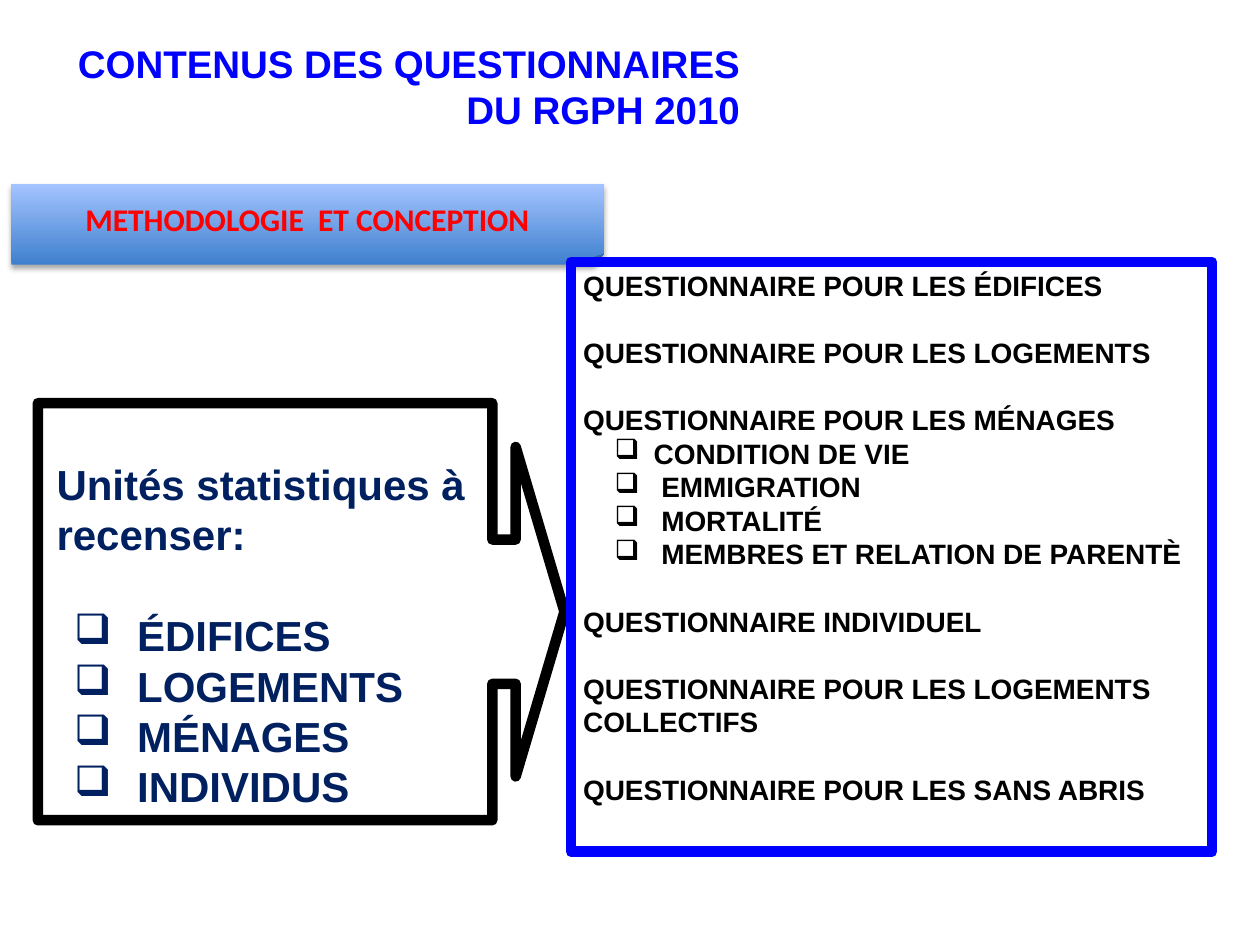
from dataclasses import dataclass
from typing import Optional

from lxml.etree import SubElement
from pptx import Presentation
from pptx.dml.color import RGBColor
from pptx.enum.shapes import MSO_SHAPE as Shape
from pptx.enum.text import MSO_ANCHOR as Anchor, PP_ALIGN as Align
from pptx.oxml.ns import qn
from pptx.util import Inches, Pt


@dataclass(frozen=True)
class Theme:
    blue: str = "0000FF"
    navy: str = "002060"
    red: str = "FF0000"
    black: str = "000000"
    band_bottom: str = "3F80CE"
    band_top: str = "A4C4FF"
    body_font: str = "Arial"
    band_font: str = "Calibri"
    title_size: int = 22
    band_size: int = 18
    units_size: int = 24
    forms_size: int = 16
    frame_width: int = 6


@dataclass(frozen=True)
class Area:
    left: float
    top: float
    width: float
    height: float

    def lengths(self):
        return [Inches(v) for v in (self.left, self.top, self.width, self.height)]


@dataclass(frozen=True)
class Bullet:
    margin: float
    hanging: float


@dataclass(frozen=True)
class Line:
    text: str
    gap: bool = False
    bullet: Optional[Bullet] = None


@dataclass(frozen=True)
class Style:
    size: int
    color: str
    font: str = Theme.body_font
    align: Align = Align.LEFT


THEME = Theme()
LINE_HEIGHT = 1.2

UNIT_BULLET = Bullet(0.64, 0.5)
FORM_BULLET = Bullet(0.62, 0.37)
UNITS = [
    Line("Unités statistiques à recenser:"),
    Line("ÉDIFICES", True, UNIT_BULLET),
    Line("LOGEMENTS", bullet=UNIT_BULLET),
    Line("MÉNAGES", bullet=UNIT_BULLET),
    Line("INDIVIDUS", bullet=UNIT_BULLET),
]
FORMS = [
    Line("QUESTIONNAIRE POUR LES ÉDIFICES"),
    Line("QUESTIONNAIRE POUR LES LOGEMENTS", True),
    Line("QUESTIONNAIRE POUR LES MÉNAGES", True),
    Line("CONDITION DE VIE", bullet=Bullet(0.56, 0.31)),
    Line("EMMIGRATION", bullet=FORM_BULLET),
    Line("MORTALITÉ", bullet=FORM_BULLET),
    Line("MEMBRES ET RELATION DE PARENTÈ", bullet=FORM_BULLET),
    Line("QUESTIONNAIRE INDIVIDUEL", True),
    Line("QUESTIONNAIRE POUR LES LOGEMENTS COLLECTIFS", True),
    Line("QUESTIONNAIRE POUR LES SANS ABRIS", True),
]


def rgb(color: str) -> RGBColor:
    return RGBColor.from_string(color)


def add_bullet(para, bullet: Bullet) -> None:
    props = para._p.get_or_add_pPr()
    props.set("marL", str(Inches(bullet.margin)))
    props.set("indent", str(-Inches(bullet.hanging)))
    SubElement(props, qn("a:buChar")).set("char", "❑")


def write_lines(box, lines: list[Line], style: Style, anchor=Anchor.TOP) -> None:
    frame = box.text_frame
    frame.word_wrap = True
    frame.vertical_anchor = anchor
    frame.text = "\n".join(line.text for line in lines)
    for para, line in zip(frame.paragraphs, lines):
        para.alignment = style.align
        if line.gap:
            para.space_before = Pt(style.size * LINE_HEIGHT)
        if line.bullet:
            add_bullet(para, line.bullet)
        for span in para.runs:
            span.font.name = style.font
            span.font.size = Pt(style.size)
            span.font.bold = True
            span.font.color.rgb = rgb(style.color)


def add_text(page, area: Area, lines: list[Line], style: Style) -> None:
    write_lines(page.shapes.add_textbox(*area.lengths()), lines, style)


def add_frame(page, kind: Shape, area: Area, color: str):
    """Add an unfilled shape with a thick outline."""
    frame = page.shapes.add_shape(kind, *area.lengths())
    frame.shadow.inherit = False
    frame.fill.background()
    frame.line.color.rgb = rgb(color)
    frame.line.width = Pt(THEME.frame_width)
    return frame


def set_guides(shape, **guides: float) -> None:
    """Set the named shape adjustments, given as fractions."""
    values = shape._element.spPr.find(qn("a:prstGeom")).find(qn("a:avLst"))
    for guide in list(values):
        values.remove(guide)
    for name, value in guides.items():
        SubElement(values, qn("a:gd"), name=name, fmla=f"val {round(value * 100000)}")


def add_soft_shadow(shape) -> None:
    shape.shadow.inherit = False
    effects = shape._element.spPr.find(qn("a:effectLst"))
    shadow = SubElement(effects, qn("a:outerShdw"), blurRad=str(Pt(3.1)),
                        dist=str(Pt(1.8)), dir="5400000", rotWithShape="0")
    color = SubElement(shadow, qn("a:srgbClr"), val=THEME.black)
    SubElement(color, qn("a:alpha"), val="35000")


def add_band(page, area: Area, text: str) -> None:
    band = page.shapes.add_shape(Shape.FOLDED_CORNER, *area.lengths())
    set_guides(band, adj=0.125)
    band.line.fill.background()
    band.fill.gradient()
    band.fill.gradient_angle = 90
    stops = zip(band.fill.gradient_stops, (THEME.band_bottom, THEME.band_top))
    for position, (stop, color) in enumerate(stops):
        stop.position = position
        stop.color.rgb = rgb(color)
    add_soft_shadow(band)
    style = Style(THEME.band_size, THEME.red, THEME.band_font, Align.CENTER)
    write_lines(band, [Line(text)], style, Anchor.MIDDLE)


def main() -> None:
    deck = Presentation()
    deck.slide_width, deck.slide_height = Inches(10), Inches(7.5)
    page = deck.slides.add_slide(deck.slide_layouts[6])

    add_text(page, Area(0.09, 0.27, 5.88, 0.84),
             [Line("CONTENUS DES QUESTIONNAIRES DU RGPH 2010")],
             Style(THEME.title_size, THEME.blue, align=Align.RIGHT))
    add_band(page, Area(0.09, 1.46, 4.7, 0.64), "METHODOLOGIE  ET CONCEPTION")
    add_text(page, Area(0.35, 3.59, 3.79, 2.93), UNITS,
             Style(THEME.units_size, THEME.navy))

    callout = add_frame(page, Shape.RIGHT_ARROW_CALLOUT,
                        Area(0.3, 3.2, 4.18, 3.31), THEME.black)
    set_guides(callout, adj1=0.346, adj2=0.395, adj3=0.117, adj4=0.863)

    forms = add_frame(page, Shape.RECTANGLE, Area(4.53, 2.08, 5.09, 4.68), THEME.blue)
    write_lines(forms, FORMS, Style(THEME.forms_size, THEME.black))

    deck.save("out.pptx")


if __name__ == "__main__":
    main()
